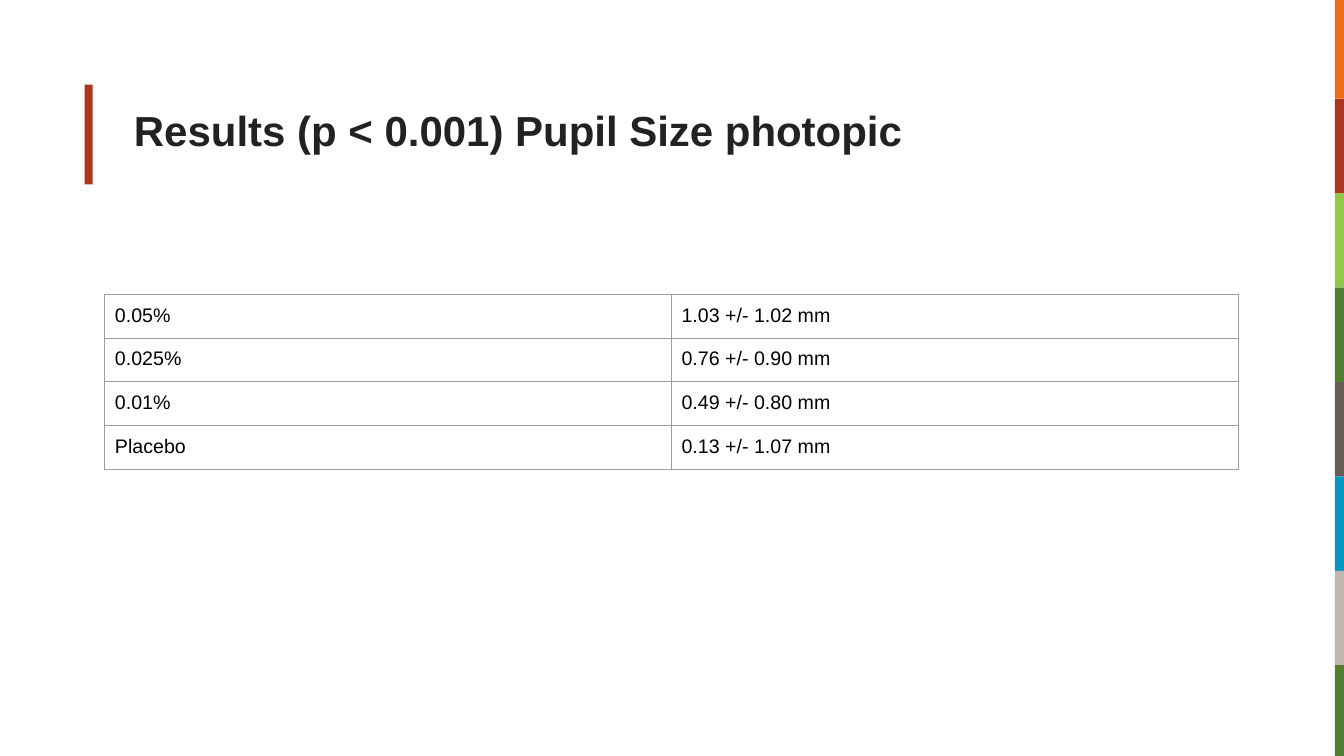
"""Build the slide with photopic pupil size results."""
import pptx
import pptx.dml.color
import pptx.enum.shapes
import pptx.enum.text
import pptx.oxml
import pptx.oxml.ns
import pptx.util
from pptx.util import Inches

SLIDE_WIDTH, SLIDE_HEIGHT = 13.33, 7.5
ACCENT = "AB371D"
STRIPE_COLORS = ["EF6B1A", ACCENT, "94C84B", "537D2F",
                 "675B54", "0097C4", "C2B6AC", "537D2F"]
STRIPE_LEFT = 13.24
FIRST_STRIPE_BOTTOM, LAST_STRIPE_TOP = 0.98, 6.6
RESULTS = [
    ("0.05%", "1.03 +/- 1.02 mm"),
    ("0.025%", "0.76 +/- 0.90 mm"),
    ("0.01%", "0.49 +/- 0.80 mm"),
    ("Placebo", "0.13 +/- 1.07 mm"),
]
COLUMN_WIDTH, ROW_HEIGHT = 5.62, 0.42


def rgb(value):
    """Return a colour from its hex string."""
    return pptx.dml.color.RGBColor.from_string(value)


def write_text(frame, text, size=14, color="000000", bold=False, spacing=None):
    """Write one formatted paragraph into a text frame."""
    frame.word_wrap = True
    paragraph = frame.paragraphs[0]
    paragraph.line_spacing = spacing
    run = paragraph.add_run()
    run.text = text
    run.font.name = "Arial"
    run.font.size = pptx.util.Pt(size)
    run.font.bold = bold
    run.font.color.rgb = rgb(color)


def add_bar(slide, left, top, width, height, color):
    """Add a plain filled rectangle."""
    bar = slide.shapes.add_shape(
        pptx.enum.shapes.MSO_SHAPE.RECTANGLE,
        Inches(left), Inches(top), Inches(width), Inches(height))
    bar.shadow.inherit = False
    bar.fill.solid()
    bar.fill.fore_color.rgb = rgb(color)
    bar.line.fill.background()


def add_stripes(slide):
    """Stack the coloured stripes down the right edge."""
    gaps = len(STRIPE_COLORS) - 2
    step = (LAST_STRIPE_TOP - FIRST_STRIPE_BOTTOM) / gaps
    edges = [0] + [FIRST_STRIPE_BOTTOM + i * step for i in range(gaps + 1)]
    edges.append(SLIDE_HEIGHT)
    for color, top, bottom in zip(STRIPE_COLORS, edges, edges[1:]):
        add_bar(slide, STRIPE_LEFT, top, SLIDE_WIDTH - STRIPE_LEFT,
                bottom - top, color)


def add_title(slide, text):
    """Add the slide title beside its accent bar."""
    add_bar(slide, 0.84, 0.84, 0.08, 0.99, ACCENT)
    title = slide.shapes.add_textbox(
        Inches(1.23), Inches(0.62), Inches(11), Inches(1.25))
    title.text_frame.vertical_anchor = pptx.enum.text.MSO_ANCHOR.MIDDLE
    write_text(title.text_frame, text, size=30, color="222222", bold=True,
               spacing=1.15)


def set_borders(cell, color, width):
    """Draw a solid border on all four sides of a cell."""
    properties = cell._tc.get_or_add_tcPr()
    for index, side in enumerate(("lnL", "lnR", "lnT", "lnB")):
        properties.insert(index, pptx.oxml.parse_xml(
            f'<a:{side} {pptx.oxml.ns.nsdecls("a")} w="{pptx.util.Pt(width)}">'
            f'<a:solidFill><a:srgbClr val="{color}"/></a:solidFill>'
            f'</a:{side}>'))


def add_results_table(slide):
    """Add the table of doses and pupil size changes."""
    row_count, column_count = len(RESULTS), len(RESULTS[0])
    table = slide.shapes.add_table(
        row_count, column_count, Inches(1.04), Inches(2.92),
        Inches(COLUMN_WIDTH * column_count),
        Inches(ROW_HEIGHT * row_count)).table
    table.first_row = False
    table.horz_banding = False
    for column in table.columns:
        column.width = Inches(COLUMN_WIDTH)
    for row, values in zip(table.rows, RESULTS):
        row.height = Inches(ROW_HEIGHT)
        for cell, value in zip(row.cells, values):
            cell.margin_left = cell.margin_right = Inches(0.1)
            cell.margin_top = cell.margin_bottom = Inches(0.1)
            cell.fill.background()
            set_borders(cell, "9E9E9E", 0.75)
            write_text(cell.text_frame, value)


def main():
    """Build and save the presentation."""
    presentation = pptx.Presentation()
    presentation.slide_width = Inches(SLIDE_WIDTH)
    presentation.slide_height = Inches(SLIDE_HEIGHT)
    slide = presentation.slides.add_slide(presentation.slide_layouts[6])
    add_stripes(slide)
    add_title(slide, "Results (p < 0.001) Pupil Size photopic")
    add_results_table(slide)
    presentation.save("out.pptx")


if __name__ == "__main__":
    main()
